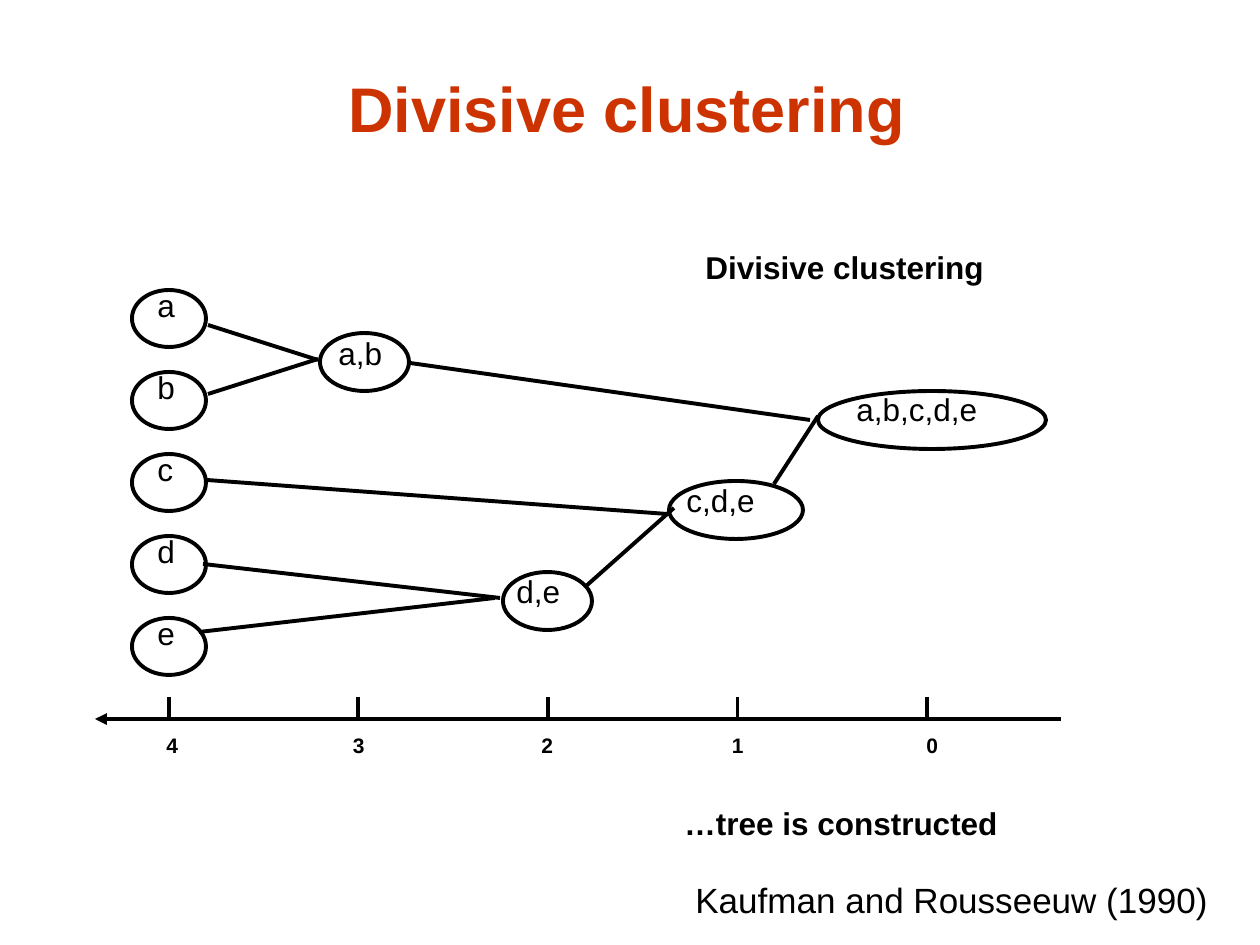
from lxml import etree
from pptx import Presentation
from pptx import util as u
from pptx.dml.color import RGBColor
from pptx.enum import shapes, text
from pptx.oxml.ns import qn

EMU_PER_PX = 914400 / 126
BLACK, RED = "000000", "CC3300"


def px(n):
    return u.Emu(round(n * EMU_PER_PX))


def color(hex_code):
    return RGBColor.from_string(hex_code)


def add_text(s, box, content, size=18, bold=False, fill=BLACK):
    tb = s.shapes.add_textbox(*map(px, box))
    tf = tb.text_frame
    tf.word_wrap = True
    tf.vertical_anchor = text.MSO_ANCHOR.TOP
    r = tf.paragraphs[0].add_run()
    r.text = content
    font = {"name": "Arial", "size": u.Pt(size), "bold": bold}
    for name, value in font.items():
        setattr(r.font, name, value)
    r.font.color.rgb = color(fill)


def style_line(line):
    line.color.rgb = color(BLACK)
    line.width = u.Pt(2.25)


def add_line(s, x1, y1, x2, y2, arrow=False):
    c = s.shapes.add_connector(shapes.MSO_CONNECTOR.STRAIGHT,
                               px(x1), px(y1), px(x2), px(y2))
    style_line(c.line)
    if arrow:
        etree.SubElement(c.line._get_or_add_ln(), qn("a:tailEnd"), type="triangle")
    etree.SubElement(c._element.spPr, qn("a:effectLst"))


def add_node(s, box, label, label_box):
    """Draw an ellipse; label_box is (dx, dy, w, h) from its top left corner."""
    sp = s.shapes.add_shape(shapes.MSO_SHAPE.OVAL, *map(px, box))
    sp.shadow.inherit = False
    sp.fill.background()
    style_line(sp.line)
    dx, dy, w, h = label_box
    add_text(s, (box[0] + dx, box[1] + dy, w, h), label)


def add_tree(s, box):
    left, top, width, height = box
    leaf_w, leaf_h, merged_h, label_h = 74, 57, 58, 63
    leaves = "abcde"
    pitch = (height - leaf_h) / (len(leaves) - 1)
    for i, leaf in enumerate(leaves):
        add_node(s, (left, top + i * pitch, leaf_w, leaf_h), leaf,
                 (13, -10, 46, label_h))

    merged = [  # label, x, y, width, label dx, label dy, label width
        ("a,b", 188, 43, 89, 6, -5, 149),
        ("d,e", 371, 282, 89, 1, -6, 76),
        ("c,d,e", 537, 191, 134, 5, -6, 149),
        ("a,b,c,d,e", 686, 101, width - 686, 26, -7, 238),
    ]
    for label, x, y, w, dx, dy, label_w in merged:
        add_node(s, (left + x, top + y, w, merged_h), label,
                 (dx, dy, label_w, label_h))

    branches = {
        "a": (76, 35, 186, 70),
        "b": (76, 104, 186, 69),
        "d": (71, 274, 368, 308),
        "e": (67, 342, 363, 308),
        "d,e": (453, 297, 542, 218),
        "c": (75, 190, 535, 224),
        "c,d,e": (642, 194, 686, 126),
        "a,b": (278, 73, 678, 130),
    }
    for x1, y1, x2, y2 in branches.values():
        add_line(s, left + x1, top + y1, left + x2, top + y2)


def add_step_axis(s, box):
    left, top, width, height = box
    tick_h, first_tick, pitch = 22, 74, 189.5
    base = top + tick_h
    add_line(s, left + width, base, left, base, arrow=True)
    label_shifts = [-15, -18, -19, -18, -13]
    for i, shift in enumerate(label_shifts):
        x = left + first_tick + i * pitch
        add_line(s, x, top, x, base)
        add_text(s, (x + shift, base + 7, 36, height - tick_h - 7),
                 str(len(label_shifts) - 1 - i), size=12, bold=True)


def main():
    prs = Presentation()
    prs.slide_width, prs.slide_height = px(1260), px(945)
    s = prs.slides.add_slide(prs.slide_layouts[6])
    add_text(s, (336, 63, 590, 89), "Divisive clustering", 36, True, RED)
    add_text(s, (693, 242, 397, 63), "Divisive clustering", bold=True)
    add_tree(s, (132, 290, 914, 385))
    add_step_axis(s, (95, 697, 966, 67))
    add_text(s, (672, 798, 444, 63), "…tree is constructed", bold=True)
    add_text(s, (683, 872, 545, 55), "Kaufman and Rousseeuw (1990)", 20)
    prs.save("out.pptx")


if __name__ == "__main__":
    main()
